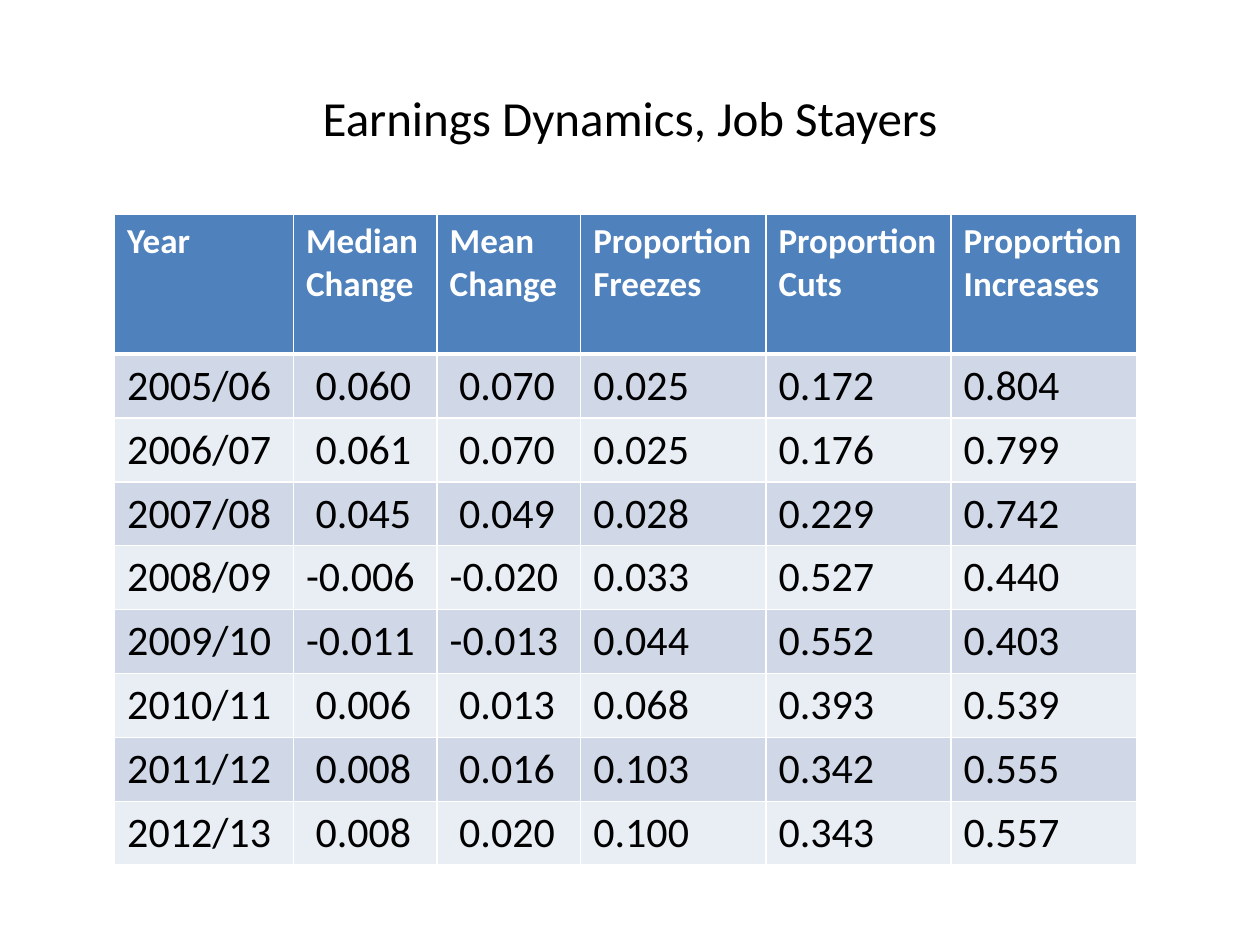
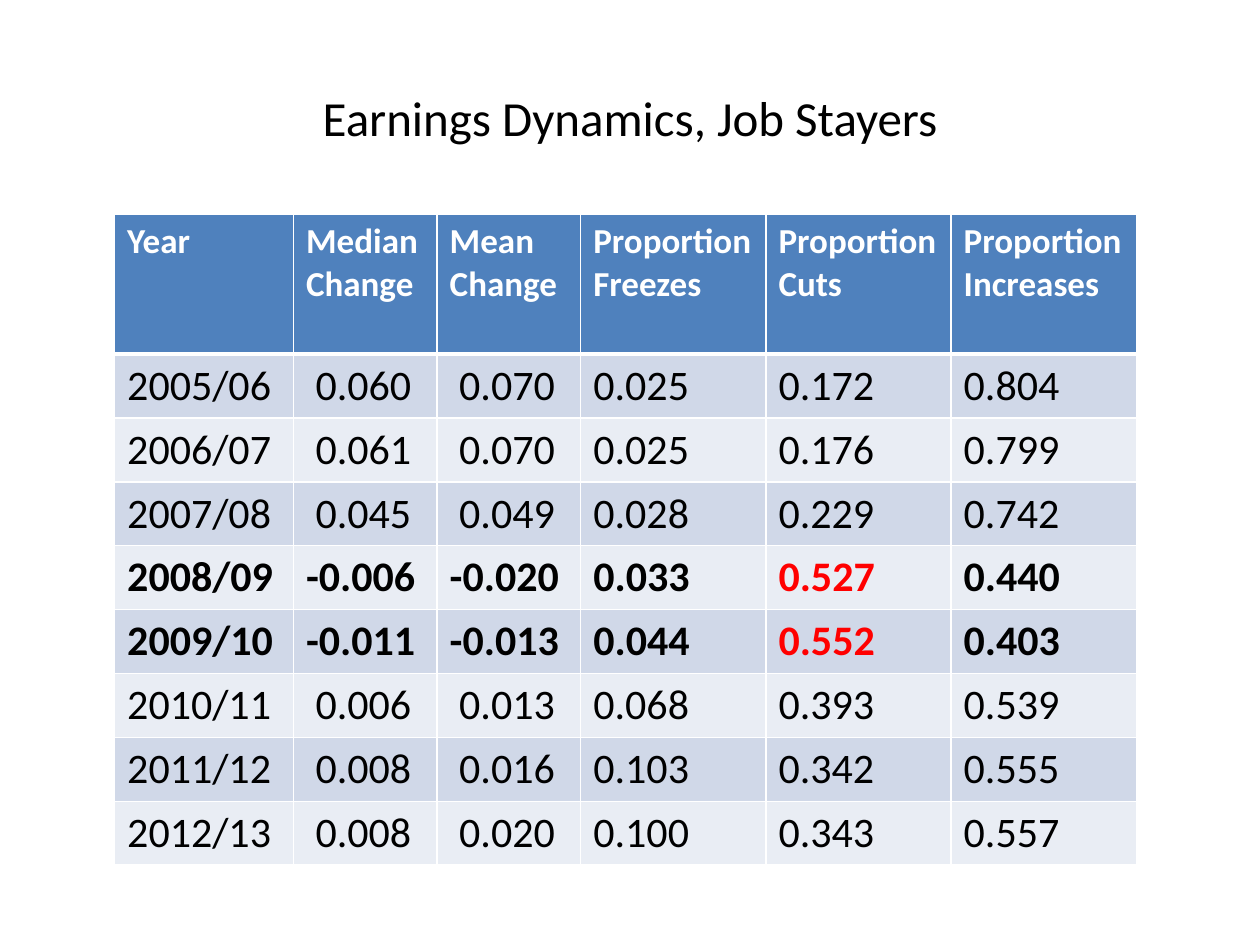
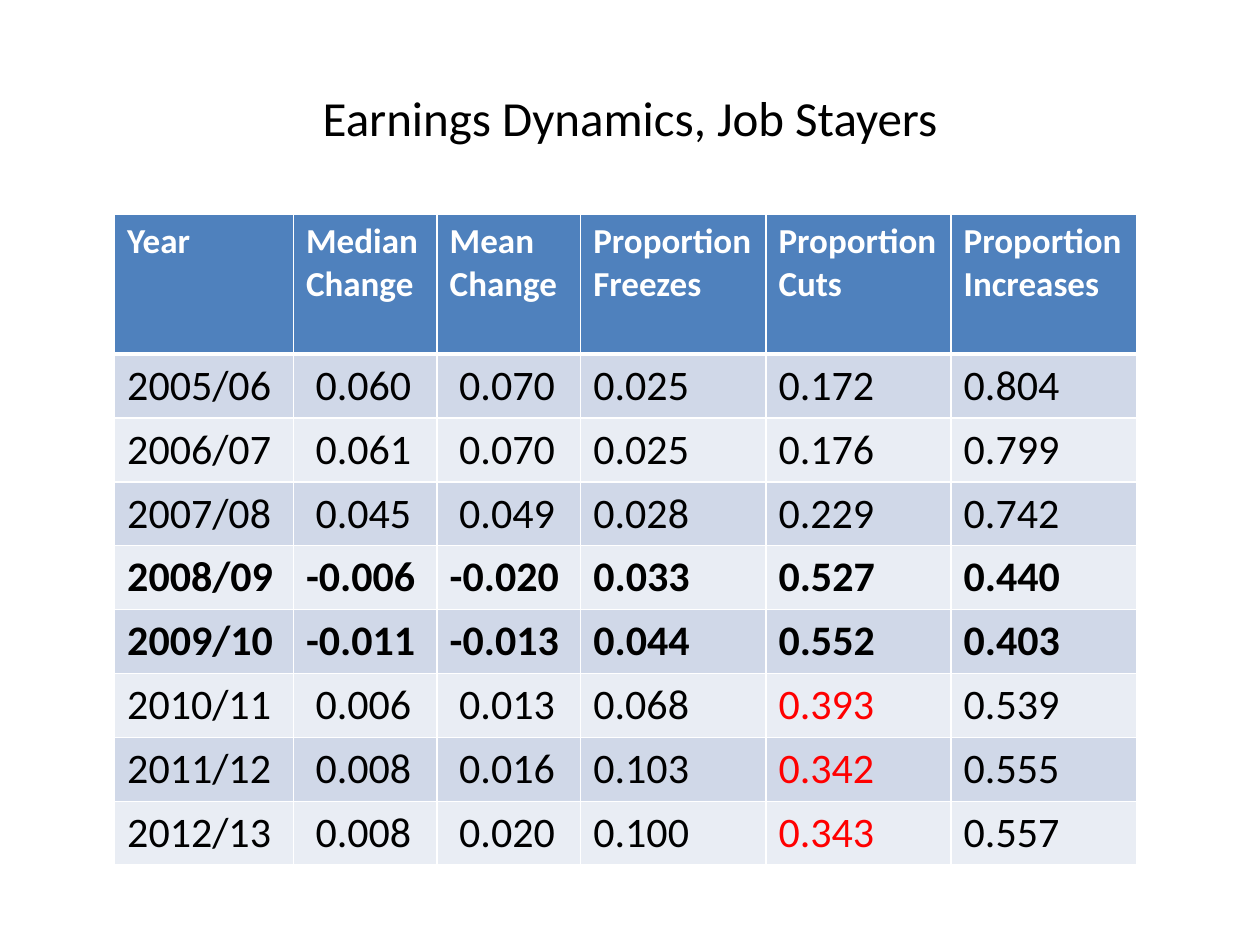
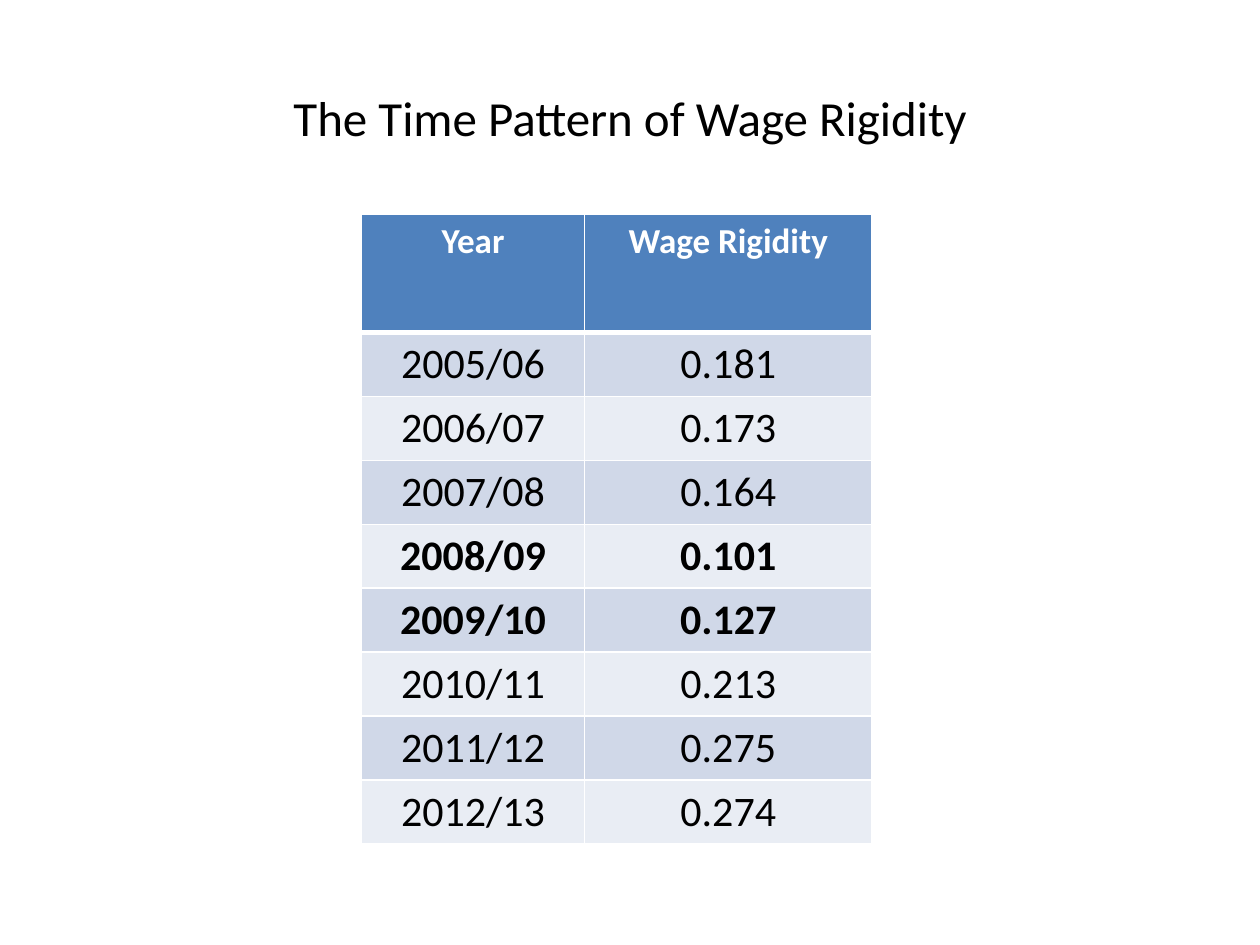
"""Build four slides of tables on earnings dynamics and wage rigidity."""
from lxml import etree
from pptx import Presentation
from pptx.dml.color import RGBColor
from pptx.enum import text
from pptx.oxml import ns
from pptx.util import Inches, Pt

COLORS = {
    "ink": "000000",
    "paper": "FFFFFF",
    "header": "4F81BD",
    "odd_band": "D0D8E8",
    "even_band": "E9EDF4",
    "highlight": "FF0000",
}
FONT = "Calibri"
TABLE_TOP = 1.7
ROW_HEIGHT = 0.49
CUTS_COLUMN = 4

YEARS = ["2005/06", "2006/07", "2007/08", "2008/09",
         "2009/10", "2010/11", "2011/12", "2012/13"]
RECESSION = {"2008/09", "2009/10"}
RECOVERY = {"2010/11", "2011/12", "2012/13"}

EARNINGS = {
    "title": "Earnings Dynamics, Job Stayers",
    "headings": ["Year", "Median Change", "Mean Change", "Proportion Freezes",
                 "Proportion Cuts", "Proportion Increases"],
    "formats": [" .3f", " .3f", ".3f", ".3f", ".3f"],
    "values": [
        (0.060, 0.070, 0.025, 0.172, 0.804),
        (0.061, 0.070, 0.025, 0.176, 0.799),
        (0.045, 0.049, 0.028, 0.229, 0.742),
        (-0.006, -0.020, 0.033, 0.527, 0.440),
        (-0.011, -0.013, 0.044, 0.552, 0.403),
        (0.006, 0.013, 0.068, 0.393, 0.539),
        (0.008, 0.016, 0.103, 0.342, 0.555),
        (0.008, 0.020, 0.100, 0.343, 0.557),
    ],
    "left": 0.91,
    "widths": [1.42, 1.14, 1.14, 1.47, 1.47, 1.47],
    "header_height": 1.11,
    "align": text.PP_ALIGN.LEFT,
}
RIGIDITY = {
    "title": "The Time Pattern of Wage Rigidity",
    "headings": ["Year", "Wage Rigidity"],
    "formats": [".3f"],
    "values": [(0.181,), (0.173,), (0.164,), (0.101,),
               (0.127,), (0.213,), (0.275,), (0.274,)],
    "left": 2.87,
    "widths": [1.77, 2.28],
    "header_height": 0.94,
    "align": text.PP_ALIGN.CENTER,
}
SLIDES = [
    {"content": EARNINGS, "bold_years": set(), "red_years": set()},
    {"content": EARNINGS, "bold_years": RECESSION, "red_years": RECESSION},
    {"content": EARNINGS, "bold_years": RECESSION, "red_years": RECOVERY},
    {"content": RIGIDITY, "bold_years": RECESSION, "red_years": set()},
]


def write_text(frame, words, size=24, color="ink", bold=False,
               align=text.PP_ALIGN.LEFT):
    """Write one formatted paragraph into a text frame."""
    paragraph = frame.paragraphs[0]
    paragraph.alignment = align
    run = paragraph.add_run()
    run.text = words
    run.font.name = FONT
    run.font.size = Pt(size)
    run.font.bold = bold
    run.font.color.rgb = RGBColor.from_string(COLORS[color])


def style_cell(cell, fill, top=1, bottom=1):
    """Fill a cell and give it white borders."""
    cell.fill.solid()
    cell.fill.fore_color.rgb = RGBColor.from_string(COLORS[fill])
    properties = cell._tc.get_or_add_tcPr()
    borders = {"a:lnL": 1, "a:lnR": 1, "a:lnT": top, "a:lnB": bottom}
    for position, (tag, width) in enumerate(borders.items()):
        line = etree.Element(ns.qn(tag), w=str(Pt(width)))
        solid = etree.SubElement(line, ns.qn("a:solidFill"))
        etree.SubElement(solid, ns.qn("a:srgbClr"), val=COLORS["paper"])
        properties.insert(position, line)


def add_year_table(slide, content, bold_years, red_years):
    """Add a table with a header and one banded row for each year."""
    widths = content["widths"]
    heights = [content["header_height"]] + [ROW_HEIGHT] * len(YEARS)
    table = slide.shapes.add_table(
        len(heights), len(widths), Inches(content["left"]), Inches(TABLE_TOP),
        Inches(sum(widths)), Inches(sum(heights))).table
    for column, width in zip(table.columns, widths):
        column.width = Inches(width)
    for row, height in zip(table.rows, heights):
        row.height = Inches(height)

    for column, heading in enumerate(content["headings"]):
        cell = table.cell(0, column)
        style_cell(cell, "header", bottom=3)
        write_text(cell.text_frame, heading, size=20, color="paper",
                   bold=True, align=content["align"])
    for row, (year, values) in enumerate(zip(YEARS, content["values"]), 1):
        entries = [year] + [format(value, pattern) for value, pattern
                            in zip(values, content["formats"])]
        for column, entry in enumerate(entries):
            cell = table.cell(row, column)
            style_cell(cell, "odd_band" if row % 2 else "even_band",
                       top=3 if row == 1 else 1)
            is_red = column == CUTS_COLUMN and year in red_years
            write_text(cell.text_frame, entry, bold=year in bold_years,
                       color="highlight" if is_red else "ink",
                       align=content["align"])


def add_slide(presentation, content, bold_years, red_years):
    """Add a slide with a centred title above a year table."""
    slide = presentation.slides.add_slide(presentation.slide_layouts[5])
    title = slide.shapes.title
    title.left, title.top = Inches(0.5), Inches(0.3)
    title.width, title.height = Inches(9), Inches(1.25)
    title.text_frame.vertical_anchor = text.MSO_ANCHOR.MIDDLE
    write_text(title.text_frame, content["title"], size=28,
               align=text.PP_ALIGN.CENTER)
    add_year_table(slide, content, bold_years, red_years)


def main():
    """Build and save the presentation."""
    presentation = Presentation()
    presentation.slide_width = Inches(10)
    presentation.slide_height = Inches(7.5)
    for slide_plan in SLIDES:
        add_slide(presentation, **slide_plan)
    presentation.save("out.pptx")


if __name__ == "__main__":
    main()
